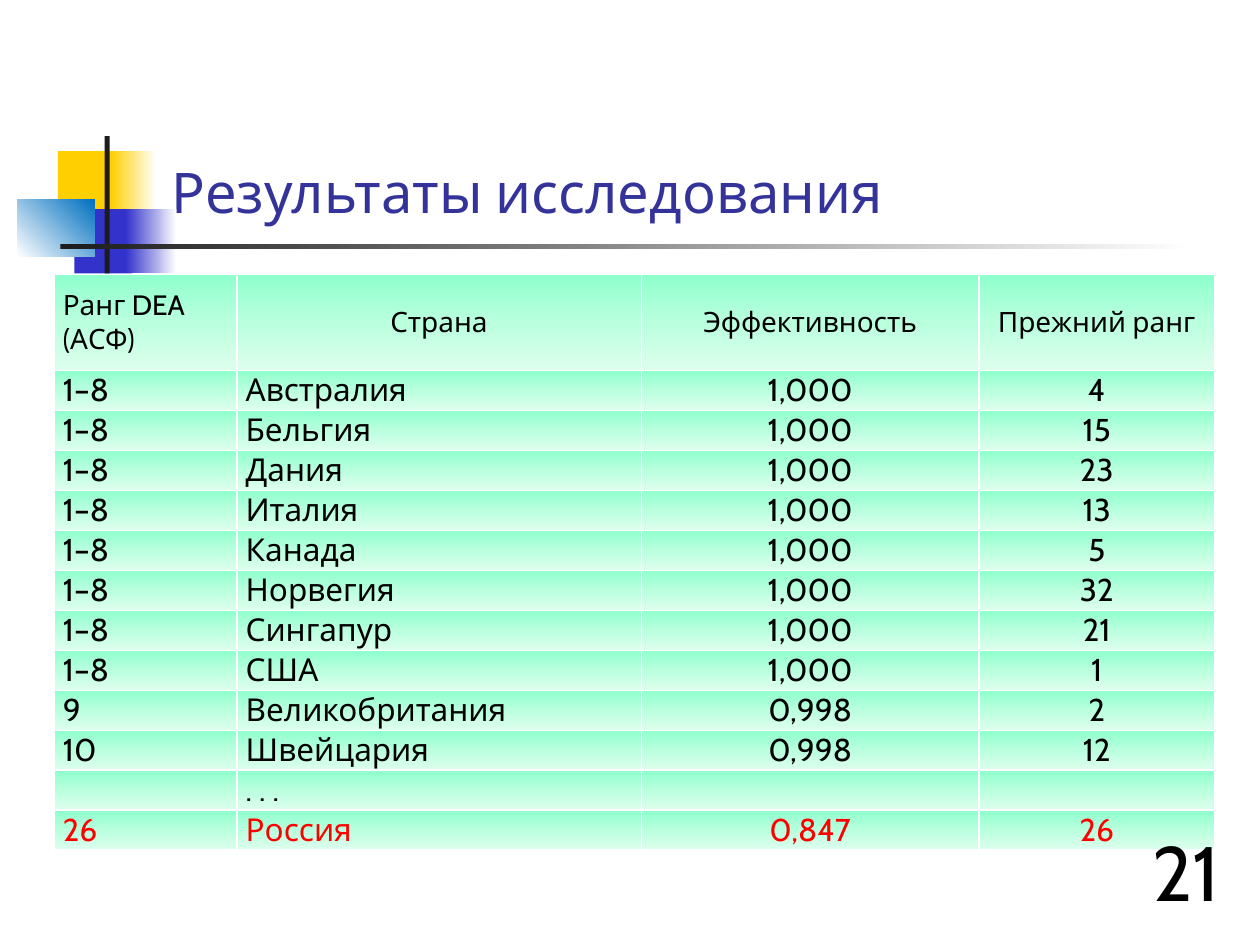
from copy import deepcopy
from lxml import etree
from pptx import Presentation
from pptx.dml.color import RGBColor as RGB
from pptx.enum.shapes import MSO_SHAPE as Shape
from pptx.enum.text import MSO_ANCHOR as Anchor, MSO_AUTO_SIZE as Fit, PP_ALIGN as Align
from pptx.oxml.ns import qn
from pptx.util import Inches, Pt

FONT = "Cabin"
BLACK = RGB(0, 0, 0)
WHITE = RGB(255, 255, 255)
RED = RGB(255, 0, 0)
GOLD = RGB(0xFF, 0xCF, 0x01)
BLUE = RGB(0x33, 0x33, 0xCC)
AZURE = RGB(0x00, 0x70, 0xC0)
DARK = RGB(0x1C, 0x1C, 0x1C)
NAVY = RGB(0x33, 0x33, 0x99)
MINT = [RGB(0x8E, 0xFF, 0xCD), RGB(0xBA, 0xFF, 0xDE), RGB(0xDD, 0xFF, 0xEE)]

BARS = [
    ((0.46, 1.2, 0.48, 0.52), [GOLD], 0),
    ((0.88, 1.2, 0.36, 0.52), [GOLD, WHITE], 0),
    ((0.59, 1.66, 0.46, 0.51), [BLUE], 0),
    ((1, 1.66, 0.4, 0.51), [BLUE, WHITE], 0),
    ((0.14, 1.58, 0.61, 0.46), [WHITE, AZURE], 45),
    ((0.83, 1.08, 0.04, 1.09), [DARK], 0),
    ((0.48, 1.94, 9, 0.04), [DARK, WHITE], 0),
]

COLS = [1.45, 3.21, 2.68, 1.87]
TALL = 4.57
HEAD_TALL = 0.76
HEAD = ["Ранг DEA\n(АСФ)", "Страна", "Эффективность", "Прежний ранг"]
TOP = [("Австралия", 4), ("Бельгия", 15), ("Дания", 23), ("Италия", 13),
       ("Канада", 5), ("Норвегия", 32), ("Сингапур", 21), ("США", 1)]
ROWS = [HEAD] + [["1–8", land, "1,000", str(old)] for land, old in TOP] + [
    ["9", "Великобритания", "0,998", "2"],
    ["10", "Швейцария", "0,998", "12"],
    ["", ". . .", "", ""],
    ["26", "Россия", "0,847", "26"],
]


def paint(fill, node, tones, angle):
    if len(tones) == 1:
        fill.solid()
        fill.fore_color.rgb = tones[0]
        return
    fill.gradient()
    fill.gradient_angle = angle
    stops = node.find(".//" + qn("a:gsLst"))
    for _ in tones[2:]:
        stops.append(deepcopy(stops[-1]))
    for i, (stop, tone) in enumerate(zip(fill.gradient_stops, tones)):
        stop.position = i / (len(tones) - 1)
        stop.color.rgb = tone


def add_bar(slide, box, tones, angle):
    bar = slide.shapes.add_shape(Shape.RECTANGLE, *map(Inches, box))
    bar.shadow.inherit = False
    bar.line.fill.background()
    paint(bar.fill, bar._element.spPr, tones, angle)


def set_text(para, text, size, tone, align):
    para.text = text
    para.alignment = align
    para.font.name = FONT
    para.font.size = Pt(size)
    para.font.color.rgb = tone


def add_title(slide, text):
    title = slide.shapes.title
    title.left, title.top, title.width, title.height = map(Inches, (1.26, 0.23, 8.52, 1.6))
    frame = title.text_frame
    frame.auto_size = Fit.NONE
    frame.vertical_anchor = Anchor.BOTTOM
    set_text(frame.paragraphs[0], text, 32, NAVY, Align.LEFT)


def add_number(slide, text):
    box = slide.shapes.add_textbox(*map(Inches, (7.7, 6.83, 2.08, 0.5)))
    frame = box.text_frame
    frame.word_wrap = True
    frame.vertical_anchor = Anchor.BOTTOM
    set_text(frame.paragraphs[0], text, 44, BLACK, Align.RIGHT)


def add_edges(cell):
    props = cell._tc.get_or_add_tcPr()
    for i, side in enumerate("LRTB"):
        edge = etree.Element(qn("a:ln" + side), w=str(Pt(1)))
        solid = etree.SubElement(edge, qn("a:solidFill"))
        etree.SubElement(solid, qn("a:srgbClr"), val=str(WHITE))
        props.insert(i, edge)


def fill_cell(cell, text, size, tone, align):
    cell.margin_left = cell.margin_right = Inches(0.07)
    cell.margin_top = cell.margin_bottom = 0
    cell.vertical_anchor = Anchor.MIDDLE
    set_text(cell.text_frame.paragraphs[0], text, size, tone, align)
    paint(cell.fill, cell._tc.get_or_add_tcPr(), MINT, 270)
    add_edges(cell)


def add_ranks(slide):
    box = map(Inches, (0.43, 2.18, sum(COLS), TALL))
    table = slide.shapes.add_table(len(ROWS), len(COLS), *box).table
    for col, width in zip(table.columns, COLS):
        col.width = Inches(width)
    step = (TALL - HEAD_TALL) / (len(ROWS) - 1)
    for r, texts in enumerate(ROWS):
        head = r == 0
        table.rows[r].height = Inches(HEAD_TALL if head else step)
        tone = RED if r == len(ROWS) - 1 else BLACK
        sides = [Align.LEFT, Align.CENTER] if head else [Align.JUSTIFY] * 2
        for c, (text, align) in enumerate(zip(texts, sides + [Align.CENTER] * 2)):
            fill_cell(table.cell(r, c), text, 16 if head else 18, tone, align)
    table.first_row = table.horz_banding = False


def main():
    deck = Presentation()
    deck.slide_width, deck.slide_height = Inches(10), Inches(7.5)
    slide = deck.slides.add_slide(deck.slide_layouts[5])
    for bar in BARS:
        add_bar(slide, *bar)
    add_title(slide, "Результаты исследования")
    add_ranks(slide)
    add_number(slide, "21")
    deck.save("out.pptx")


if __name__ == "__main__":
    main()
